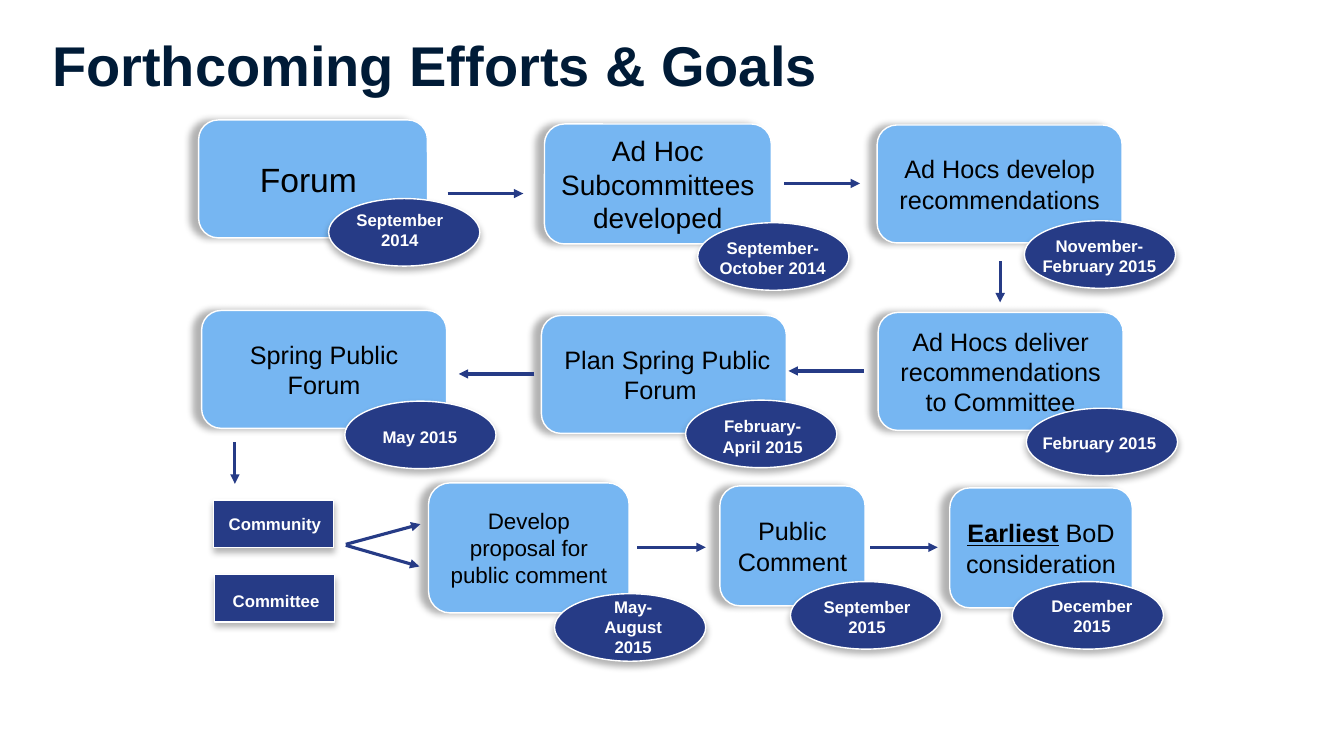
from lxml.etree import SubElement
from pptx import Presentation
from pptx.dml.color import RGBColor
from pptx.enum.shapes import MSO_CONNECTOR, MSO_SHAPE
from pptx.enum.text import MSO_ANCHOR, PP_ALIGN
from pptx.oxml.ns import qn
from pptx.util import Emu, Pt

PX = 9144  # 100 px to the inch
NAVY = RGBColor(0x26, 0x3B, 0x86)
SKY = RGBColor(0x76, 0xB6, 0xF2)
INK = RGBColor(0x00, 0x1B, 0x37)
BLACK = RGBColor(0, 0, 0)
WHITE = RGBColor(255, 255, 255)

# left, top, width, height, font size, words
STEPS = [
    (197, 119, 227, 117, 24, "Forum "),
    (540, 123, 225, 119, 20, "Ad Hoc Subcommittees developed"),
    (870, 124, 243, 117, 18, "Ad Hocs develop recommendations"),
    (871, 310, 243, 117, 18, "Ad Hocs deliver recommendations to Committee"),
    (537, 313, 243, 117, 18, " Plan Spring Public Forum "),
    (200, 308, 243, 117, 18, "Spring Public Forum"),
    (425, 479, 199, 129, 16, "Develop proposal for public comment"),
    (714, 482, 144, 119, 18, "Public Comment"),
    (942, 484, 181, 119, 18, "Earliest| BoD consideration"),
]

# oval left and top, then label left, top, width, height, words
DATES = [
    (326, 197, 334, 203, 125, 50, "September 2014"),
    (692, 221, 700, 231, 133, 50, "September-October 2014"),
    (1016, 219, 1024, 229, 133, 50, "November-February 2015"),
    (1018, 405, 1024, 424, 133, 30, "February 2015"),
    (680, 397, 696, 408, 121, 50, "February- April 2015"),
    (342, 398, 356, 418, 121, 30, "May 2015"),
    (550, 589, 572, 587, 112, 71, "May-August 2015"),
    (784, 577, 805, 587, 110, 50, "September 2015"),
    (1004, 577, 1032, 586, 102, 50, "December 2015"),
]

# box left and top, then label left, top, width, words
GROUPS = [
    (212, 496, 217, 505, 118, "Community"),
    (213, 570, 221, 581, 150, "Committee"),
]

ARROWS = [
    (444, 192, 519, 192), (778, 182, 853, 182), (992, 259, 992, 300),
    (857, 368, 782, 368), (530, 371, 455, 371), (233, 439, 233, 480),
    (343, 540, 417, 520), (343, 541, 416, 562),
    (632, 543, 700, 543), (863, 543, 930, 543),
]


def scale(*lengths):
    return [Emu(n * PX) for n in lengths]


def write(shape, words, size, color, bold=False, align=PP_ALIGN.CENTER,
          anchor=MSO_ANCHOR.TOP):
    """Fill a shape with text; words before a bar are bold and underlined."""
    frame = shape.text_frame
    frame.word_wrap = True
    frame.vertical_anchor = anchor
    para = frame.paragraphs[0]
    para.alignment = align
    head, bar, rest = words.rpartition("|")
    for part in filter(None, (head, rest)):
        run = para.add_run()
        run.text = part
        font = run.font
        font.name, font.size = "Arial", Pt(size)
        font.color.rgb = color
        font.bold = bold or part == head
        font.underline = part == head


def label(slide, area, words, size=12, color=WHITE, **style):
    box = slide.shapes.add_textbox(*scale(*area))
    write(box, words, size, color, bold=True, **style)


def shade(shape, angle, far):
    """Add a soft outer shadow; angle in degrees, far in points."""
    shape.shadow.inherit = False
    effects = shape._element.spPr.find(qn("a:effectLst"))
    outer = SubElement(effects, qn("a:outerShdw"), blurRad=str(Pt(5)),
                       dist=str(Pt(far)), dir=str(angle * 60000),
                       algn="ctr", rotWithShape="0")
    tint = SubElement(outer, qn("a:srgbClr"), val="000000")
    SubElement(tint, qn("a:alpha"), val="30000")


def block(slide, kind, area, fill, angle=90, far=3):
    shape = slide.shapes.add_shape(kind, *scale(*area))
    shape.fill.solid()
    shape.fill.fore_color.rgb = fill
    shape.line.color.rgb = WHITE
    shape.line.width = Pt(1)
    shade(shape, angle, far)
    return shape


def arrow(slide, ends):
    link = slide.shapes.add_connector(MSO_CONNECTOR.STRAIGHT, *scale(*ends))
    link.line.color.rgb = NAVY
    link.line.width = Pt(2.25)
    SubElement(link.line._get_or_add_ln(), qn("a:tailEnd"), type="triangle")
    SubElement(link._element.spPr, qn("a:effectLst"))


def main():
    deck = Presentation()
    deck.slide_width, deck.slide_height = scale(1333, 750)
    slide = deck.slides.add_slide(deck.slide_layouts[6])

    label(slide, (42, 17, 1275, 93), "Forthcoming Efforts & Goals", 40, INK,
          align=PP_ALIGN.LEFT, anchor=MSO_ANCHOR.MIDDLE)
    for *area, size, words in STEPS:
        step = block(slide, MSO_SHAPE.ROUNDED_RECTANGLE, area, SKY, 180, 6)
        write(step, words, size, BLACK, anchor=MSO_ANCHOR.MIDDLE)
    for ends in ARROWS:
        arrow(slide, ends)
    for left, top, *area, words in DATES:
        block(slide, MSO_SHAPE.OVAL, (left, top, 150, 67), NAVY)
        label(slide, area, words)
    for left, top, *area, words in GROUPS:
        block(slide, MSO_SHAPE.RECTANGLE, (left, top, 119, 47), NAVY)
        label(slide, (*area, 30), words, align=PP_ALIGN.LEFT)

    deck.save("out.pptx")


if __name__ == "__main__":
    main()
